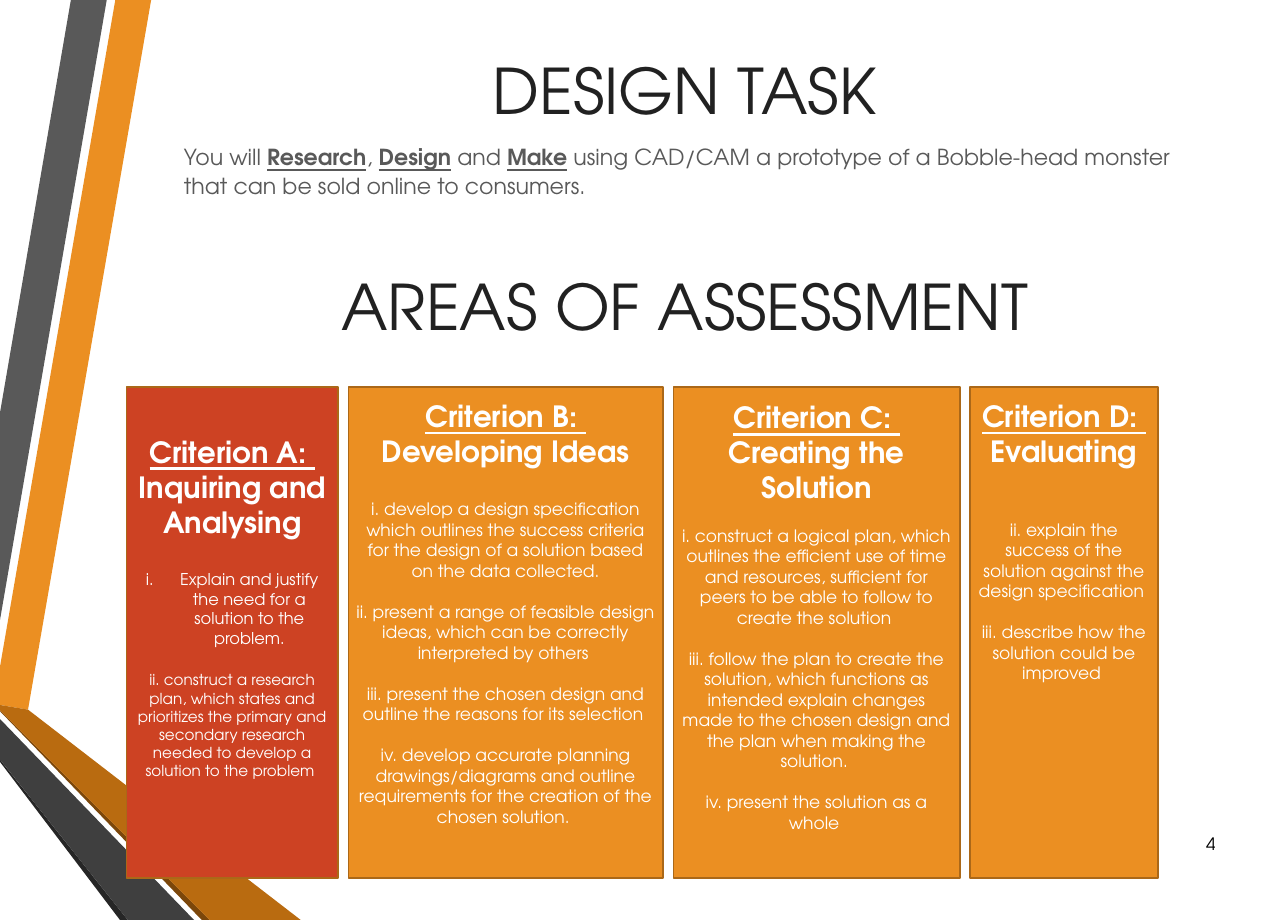
from pptx import Presentation
from pptx.dml.color import RGBColor
from pptx.enum.shapes import MSO_SHAPE
from pptx.enum.text import MSO_ANCHOR, MSO_AUTO_SIZE, PP_ALIGN
from pptx.util import Inches, Pt
from lxml import etree

RECT = MSO_SHAPE.RECTANGLE
TOP, MIDDLE = MSO_ANCHOR.TOP, MSO_ANCHOR.MIDDLE
LEFT, CENTER, RIGHT = PP_ALIGN.LEFT, PP_ALIGN.CENTER, PP_ALIGN.RIGHT
FIXED = MSO_AUTO_SIZE.NONE

FONT = "TeX Gyre Adventor"
WHITE = RGBColor(0xFF, 0xFF, 0xFF)
BLACK = RGBColor(0x00, 0x00, 0x00)
INK = RGBColor(0x21, 0x21, 0x21)
GREY = RGBColor(0x59, 0x59, 0x59)
COAL = RGBColor(0x3F, 0x3F, 0x3F)
DARK = RGBColor(0x26, 0x26, 0x26)
ORANGE = RGBColor(0xEB, 0x8F, 0x22)
AMBER = RGBColor(0xB9, 0x6B, 0x10)
BROWN = RGBColor(0x7B, 0x47, 0x0B)
EDGE = RGBColor(0xAB, 0x68, 0x18)
RED = RGBColor(0xCD, 0x42, 0x23)

WIDE, HIGH = 16.53, 11.81
GAP = 0.13

# Ribbon outlines, back to front
RIBBONS = [
    (ORANGE, [(0, 8.56), (0, 9.05), (0.36, 9.11), (1.94, 0), (1.48, 0)]),
    (GREY, [(1.37, 0), (0.91, 0), (0, 5.3), (0, 7.96)]),
    (DARK, [(0, 9.75), (0, 9.78), (1.54, HIGH), (1.64, HIGH)]),
    (BROWN, [(0, 9.12), (0, 9.13), (2.59, HIGH), (2.69, HIGH)]),
    (AMBER, [(0, 9.12), (2.69, HIGH), (3.86, HIGH), (0.36, 9.11), (0, 9.05)]),
    (COAL, [(0, 9.75), (1.64, HIGH), (2.49, HIGH), (0, 9.23)]),
]

# Cards: width, fill, top inset, name, topic, items (text, size, space before, numbered)
CARDS = [
    (2.72, RED, 0.6, "Criterion A: ", "Inquiring and Analysing", [
        ("Explain and justify the need for a solution to the problem.", 15, 28, True),
        ("ii. construct a research plan, which states and prioritizes the primary and "
         "secondary research needed to develop a solution to the problem ", 14, 21.6, False)]),
    (4.04, ORANGE, 0.14, "Criterion B: ", "Developing Ideas", [
        ("i. develop a design specification which outlines the success criteria for the "
         "design of a solution based on the data collected.", 15.8, 28, False),
        ("ii. present a range of feasible design ideas, which can be correctly "
         "interpreted by others ", 15.8, 19, False),
        ("iii. present the chosen design and outline the reasons for its selection ",
         15.8, 19, False),
        ("iv. develop accurate planning drawings/diagrams and outline requirements for "
         "the creation of the chosen solution. ", 15.8, 19, False)]),
    (3.68, ORANGE, 0.16, "Criterion C: ", "Creating the Solution", [
        ("i. construct a logical plan, which outlines the efficient use of time and "
         "resources, sufficient for peers to be able to follow to create the solution ",
         15.8, 19, False),
        ("iii. follow the plan to create the solution, which functions as intended "
         "explain changes made to the chosen design and the plan when making the "
         "solution. ", 15.8, 19, False),
        ("iv. present the solution as a whole ", 15.8, 19, False)]),
    (2.41, ORANGE, 0.14, "Criterion D: ", "Evaluating", [
        ("ii. explain the success of the solution against the design specification ",
         15.8, 47, False),
        ("iii. describe how the solution could be improved ", 15.8, 19, False)]),
]

INTRO = [("You will ", False), ("Research", True), (", ", False), ("Design", True),
         (" and ", False), ("Make", True),
         (" using CAD/CAM a prototype of a Bobble-head monster that can be sold "
          "online to consumers.", False)]


def write(para, text, size=15.8, color=WHITE, bold=False, under=False,
          align=CENTER, before=0, lines=1.0):
    para.alignment = align
    para.space_before = Pt(before)
    para.line_spacing = lines
    run = para.add_run()
    run.text = text
    font = run.font
    font.name, font.size, font.bold, font.underline = FONT, Pt(size), bold, under
    font.color.rgb = color


def frame(shape, side=0.15, top=0.07, anchor=TOP):
    text = shape.text_frame
    text.word_wrap = True
    text.auto_size = FIXED
    text.vertical_anchor = anchor
    text.margin_left = text.margin_right = Inches(side)
    text.margin_top, text.margin_bottom = Inches(top), Inches(0.05)
    return text


def place(shape, box):
    shape.left, shape.top, shape.width, shape.height = map(Inches, box)


def indent(para, left, first, mark):
    props = para._p.get_or_add_pPr()
    props.set("marL", str(Inches(left)))
    props.set("indent", str(Inches(first)))
    space = props.nsmap["a"]
    bullet = etree.SubElement(props, f"{{{space}}}{mark}")
    if mark == "buAutoNum":
        bullet.set("type", "romanLcPeriod")


def ribbons(slide, box):
    for color, points in RIBBONS:
        spots = [(Inches(box[0] + x), Inches(box[1] + y)) for x, y in points]
        pen = slide.shapes.build_freeform(*spots[0], scale=1.0)
        pen.add_line_segments(spots[1:], close=True)
        band = pen.convert_to_shape()
        band.shadow.inherit = False
        band.fill.solid()
        band.fill.fore_color.rgb = color
        band.line.fill.background()


def heading(shape, text, box):
    place(shape, box)
    write(frame(shape).paragraphs[0], text, size=58.1, color=INK, lines=0.9)


def intro(shape, box):
    place(shape, box)
    para = frame(shape).paragraphs[0]
    for text, strong in INTRO:
        write(para, text, size=20.4, color=GREY, bold=strong, under=strong,
              align=LEFT, lines=1.1)
    indent(para, 0, 0, "buNone")


def card(slide, box, fill, top, name, topic, items):
    shape = slide.shapes.add_shape(RECT, *map(Inches, box))
    shape.shadow.inherit = False
    shape.fill.solid()
    shape.fill.fore_color.rgb = fill
    shape.line.color.rgb = EDGE
    shape.line.width = Pt(1.25)
    text = frame(shape, side=0.1, top=top)
    write(text.paragraphs[0], name, size=27, bold=True, under=True)
    write(text.add_paragraph(), topic, size=27, bold=True)
    for item, size, before, numbered in items:
        para = text.add_paragraph()
        write(para, item, size=size, before=before)
        if numbered:
            indent(para, 0.44, -0.44, "buAutoNum")


def cards(slide, box):
    left, top, _, high = box
    for wide, *parts in CARDS:
        card(slide, (left, top, wide, high), *parts)
        left += wide + GAP


def number(slide, box):
    shape = slide.shapes.add_textbox(*map(Inches, box))
    text = frame(shape, side=0.1, top=0.05, anchor=MIDDLE)
    write(text.paragraphs[0], "4", color=BLACK, align=RIGHT)


def main():
    deck = Presentation()
    deck.slide_width, deck.slide_height = Inches(WIDE), Inches(HIGH)
    slide = deck.slides.add_slide(deck.slide_layouts[1])

    # Side decoration
    ribbons(slide, (0, 0, WIDE, HIGH))
    # Task title and summary
    heading(slide.shapes.title, "DESIGN TASK", (2.21, 0.7, 13.15, 1.29))
    intro(slide.placeholders[1], (2.21, 1.74, 13.15, 1.08))
    # Assessment heading and criteria
    areas = slide.shapes.add_textbox(0, 0, 0, 0)
    heading(areas, "AREAS OF ASSESSMENT", (2.21, 3.48, 13.15, 1.29))
    cards(slide, (1.62, 4.97, 13.24, 6.3))
    # Page number
    number(slide, (14.93, 10.52, 0.77, 0.63))

    deck.save("out.pptx")


if __name__ == "__main__":
    main()
